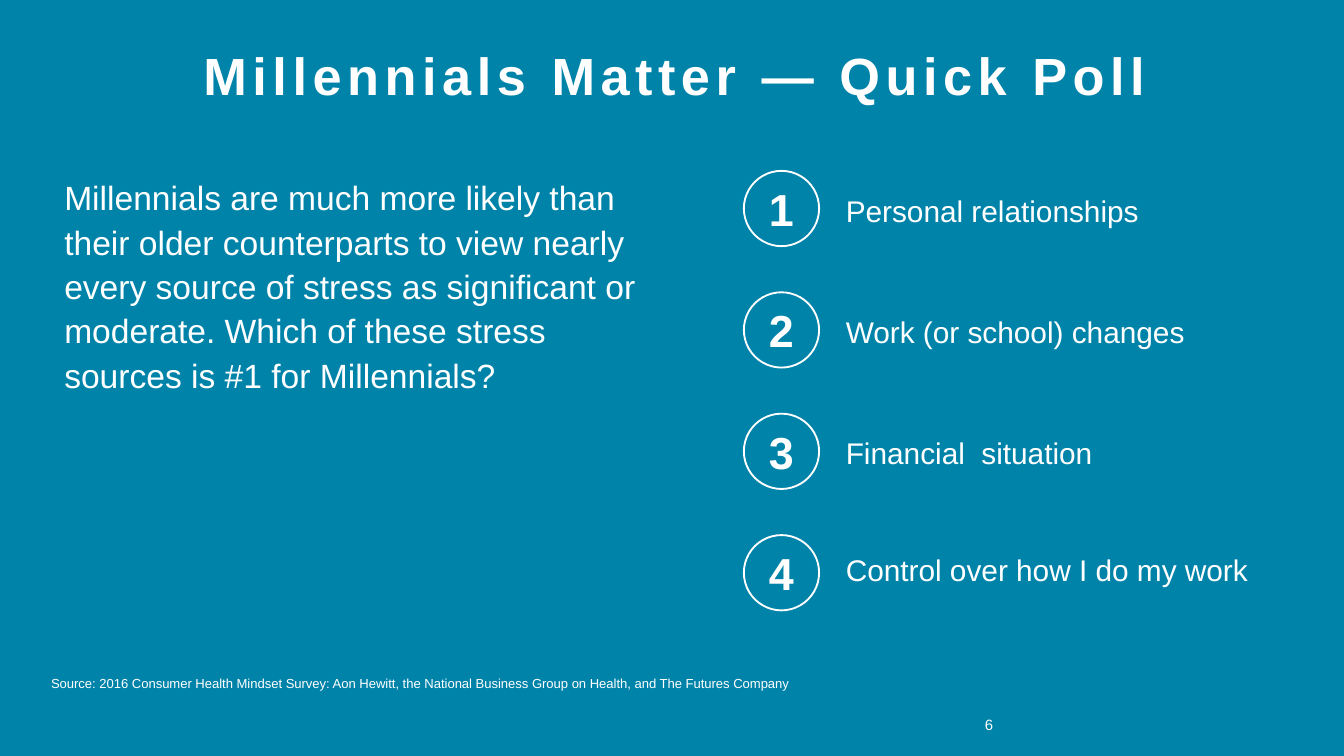
from dataclasses import dataclass

from pptx import Presentation
from pptx.dml.color import RGBColor
from pptx.enum.shapes import MSO_SHAPE
from pptx.enum.text import MSO_ANCHOR, PP_ALIGN
from pptx.util import Inches, Pt

# Widescreen, 16 to 9
SLIDE_WIDTH = Inches(10)
SLIDE_HEIGHT = SLIDE_WIDTH * 9 // 16
BACKGROUND, WHITE = "0083A9", "FFFFFF"
FONT = "Arial"


@dataclass(frozen=True)
class Area:
    """A rectangle in percent of the slide's width and height."""
    left: float
    top: float
    width: float
    height: float

    def lengths(self) -> tuple:
        return (int(SLIDE_WIDTH * self.left / 100), int(SLIDE_HEIGHT * self.top / 100),
                int(SLIDE_WIDTH * self.width / 100), int(SLIDE_HEIGHT * self.height / 100))


@dataclass(frozen=True)
class TextStyle:
    size: float
    bold: bool = False
    align: PP_ALIGN = PP_ALIGN.LEFT
    anchor: MSO_ANCHOR = MSO_ANCHOR.TOP
    line_spacing: float = 1.0
    space_after: float = 0
    inset_x: float = 0.1
    inset_y: float = 0.05


@dataclass(frozen=True)
class Choice:
    text: str
    width: float
    height: float = 7.12
    shift: float = 0


# Styles
TITLE = TextStyle(28, bold=True, align=PP_ALIGN.CENTER, line_spacing=0.9)
QUESTION = TextStyle(18, line_spacing=1.1, space_after=12)
LABEL = TextStyle(16, line_spacing=1.1, space_after=6)
NUMBER = TextStyle(24, bold=True, align=PP_ALIGN.CENTER, anchor=MSO_ANCHOR.MIDDLE, inset_x=0.05)
SOURCE = TextStyle(7, inset_x=0, inset_y=0)
PAGE = TextStyle(8, align=PP_ALIGN.RIGHT, anchor=MSO_ANCHOR.BOTTOM, inset_x=0, inset_y=0)

# Answer rows
CHOICES = [
    Choice("Personal relationships", 30.6),
    Choice("Work (or school) changes", 28.6),
    Choice("Financial  situation", 22.5, height=6.58, shift=-0.15),
    Choice("Control over how I do my work", 34.5, shift=-0.65),
]
FIRST_ROW, ROW_PITCH = 22.6, 16.06
LABEL_DROP = 1.55


def color(value: str) -> RGBColor:
    return RGBColor.from_string(value)


def write_text(shape, text: str, style: TextStyle) -> None:
    frame = shape.text_frame
    frame.text = text
    frame.word_wrap = True
    frame.vertical_anchor = style.anchor
    frame.margin_left = frame.margin_right = Inches(style.inset_x)
    frame.margin_top = frame.margin_bottom = Inches(style.inset_y)
    paragraph = frame.paragraphs[0]
    paragraph.alignment = style.align
    paragraph.line_spacing = style.line_spacing
    paragraph.space_before = Pt(0)
    paragraph.space_after = Pt(style.space_after)
    font = paragraph.runs[0].font
    font.name, font.size, font.bold = FONT, Pt(style.size), style.bold
    font.color.rgb = color(WHITE)


def add_text(slide, area: Area, text: str, style: TextStyle) -> None:
    write_text(slide.shapes.add_textbox(*area.lengths()), text, style)


def add_title(slide, area: Area, text: str) -> None:
    title = slide.shapes.title
    title.left, title.top, title.width, title.height = area.lengths()
    write_text(title, text, TITLE)
    # Letter spacing of 3 points
    title.text_frame.paragraphs[0].runs[0].font._element.set("spc", "300")


def add_choice(slide, row: int, choice: Choice) -> None:
    top = FIRST_ROW + row * ROW_PITCH
    circle = slide.shapes.add_shape(MSO_SHAPE.OVAL, *Area(55.35, top, 5.6, 9.96).lengths())
    circle.shadow.inherit = False
    circle.fill.background()
    circle.line.color.rgb = color(WHITE)
    circle.line.width = Pt(1)
    write_text(circle, str(row + 1), NUMBER)
    label_top = top + LABEL_DROP + choice.shift
    add_text(slide, Area(61.95, label_top, choice.width, choice.height), choice.text, LABEL)


def main() -> None:
    presentation = Presentation()
    presentation.slide_width, presentation.slide_height = SLIDE_WIDTH, SLIDE_HEIGHT
    slide = presentation.slides.add_slide(presentation.slide_layouts[5])
    slide.background.fill.solid()
    slide.background.fill.fore_color.rgb = color(BACKGROUND)

    # Title and question
    add_title(slide, Area(4, 5.75, 92.4, 8.36), "Millennials Matter — Quick Poll")
    add_text(slide, Area(3.8, 22.04, 44.5, 31.47),
             "Millennials are much more likely than their older counterparts to view nearly "
             "every source of stress as significant or moderate. Which of these stress "
             "sources is #1 for Millennials?", QUESTION)

    # Numbered answers
    for row, choice in enumerate(CHOICES):
        add_choice(slide, row, choice)

    # Source line and page number
    add_text(slide, Area(3.8, 89.32, 61, 3.38),
             "Source: 2016 Consumer Health Mindset Survey: Aon Hewitt, the National Business "
             "Group on Health, and The Futures Company", SOURCE)
    add_text(slide, Area(70, 94.66, 3.9, 2.31), "6", PAGE)

    presentation.save("out.pptx")


if __name__ == "__main__":
    main()
